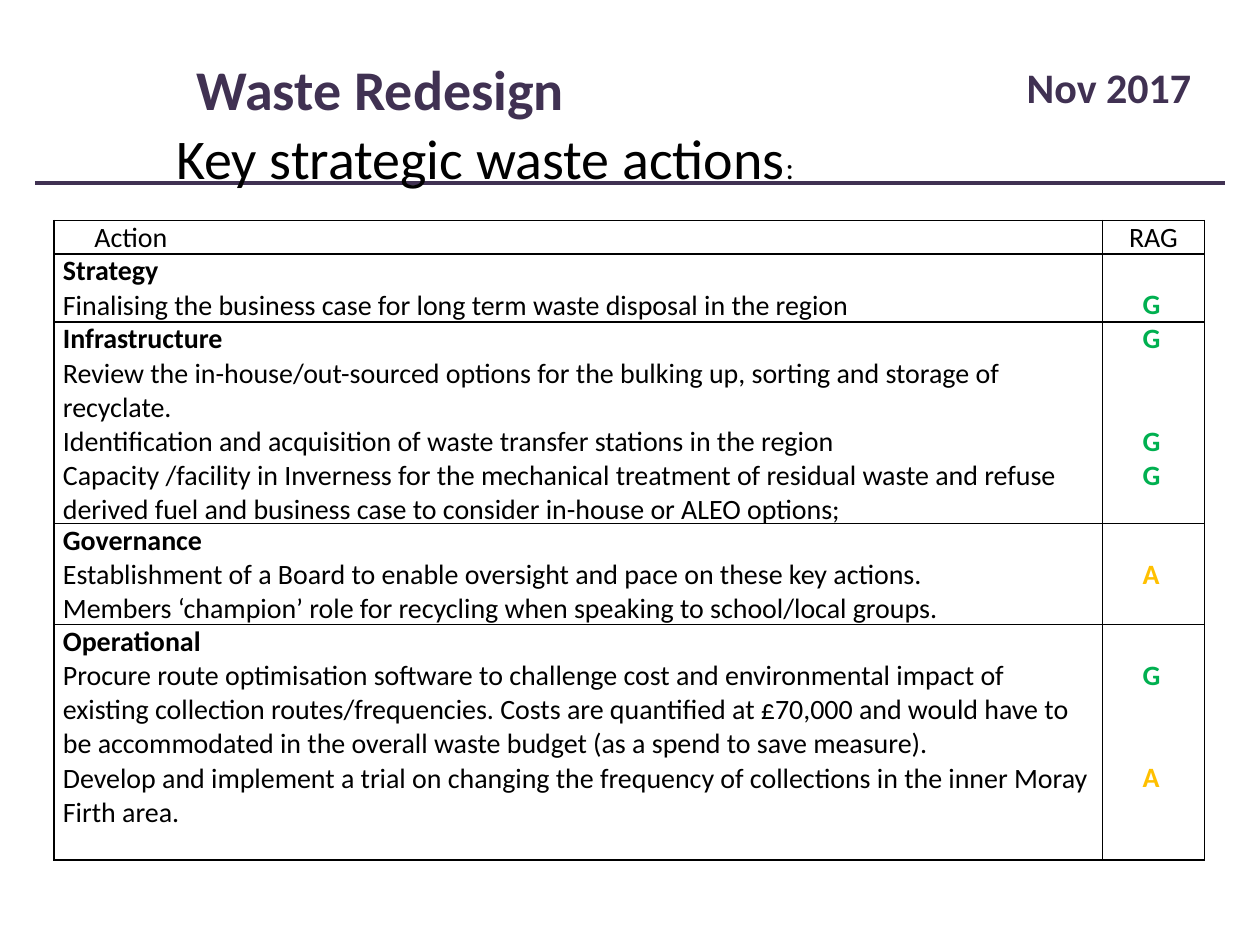
from dataclasses import dataclass

from lxml import etree
from pptx import Presentation
from pptx.dml.color import RGBColor
from pptx.enum.shapes import MSO_CONNECTOR
from pptx.enum.text import MSO_ANCHOR, MSO_AUTO_SIZE, PP_ALIGN
from pptx.oxml.ns import qn
from pptx.util import Inches, Pt

LEFT, CENTER = PP_ALIGN.LEFT, PP_ALIGN.CENTER
PURPLE = RGBColor(0x40, 0x31, 0x52)
BLACK = RGBColor(0x00, 0x00, 0x00)
RAG_COLORS = {"G": RGBColor(0x00, 0xB0, 0x50), "A": RGBColor(0xFF, 0xC0, 0x00)}
FONT = "Calibri"
BODY_SIZE = 16
LINE_HEIGHT = 19.5  # points taken by one line of body text
INDENT = 0.25


@dataclass
class Section:
    heading: str
    actions: list[str]
    ratings: list[tuple[int, str]]  # line number in the cell, rating
    height: float


SECTIONS = [
    Section("Strategy",
            ["Finalising the business case for long term waste disposal in the region"],
            [(1, "G")], 0.54),
    Section("Infrastructure",
            ["Review the in-house/out-sourced options for the bulking up, sorting and "
             "storage of recyclate.",
             "Identification and acquisition of waste transfer stations in the region",
             "Capacity /facility in Inverness for the mechanical treatment of residual "
             "waste and refuse derived fuel and business case to consider in-house or "
             "ALEO options;"],
            [(0, "G"), (3, "G"), (4, "G")], 1.6),
    Section("Governance",
            ["Establishment of a Board to enable oversight and pace on these key actions.",
             "Members ‘champion’ role for recycling when speaking to school/local groups."],
            [(1, "A")], 0.8),
    Section("Operational",
            ["Procure route optimisation software to challenge cost and environmental "
             "impact of existing collection routes/frequencies. Costs are quantified at "
             "£70,000 and would have to be accommodated in the overall waste budget "
             "(as a spend to save measure).",
             "Develop and implement a trial on changing the frequency of collections in "
             "the inner Moray Firth area."],
            [(1, "G"), (4, "A")], 1.87),
]


def add_text(paragraph, text: str, *, size: float = BODY_SIZE, color: RGBColor = BLACK,
             bold: bool = False, align=LEFT, indent: float = 0, before: float = 0) -> None:
    """Add a formatted run to a paragraph."""
    properties = paragraph._p.get_or_add_pPr()
    properties.set("marL", str(Inches(indent)))
    properties.set("indent", "0")
    paragraph.alignment = align
    paragraph.space_before = Pt(before)
    run = paragraph.add_run()
    run.text = text
    run.font.name, run.font.size, run.font.bold = FONT, Pt(size), bold
    run.font.color.rgb = color


def next_paragraph(text_frame, index: int):
    return text_frame.paragraphs[0] if index == 0 else text_frame.add_paragraph()


def place_text_shape(shape, left: float, top: float, width: float, height: float):
    """Position a text shape and return its first paragraph."""
    shape.left, shape.top = Inches(left), Inches(top)
    shape.width, shape.height = Inches(width), Inches(height)
    text_frame = shape.text_frame
    text_frame.word_wrap = False
    text_frame.auto_size = MSO_AUTO_SIZE.SHAPE_TO_FIT_TEXT
    text_frame.vertical_anchor = MSO_ANCHOR.TOP
    return text_frame.paragraphs[0]


def format_cell(cell) -> None:
    """Give a cell thin black borders, no fill and narrow margins."""
    cell.margin_left = cell.margin_right = Inches(0.07)
    cell.margin_top = cell.margin_bottom = 0
    properties = cell._tc.get_or_add_tcPr()
    for side in ("lnL", "lnR", "lnT", "lnB"):
        border = etree.SubElement(properties, qn(f"a:{side}"), w=str(Pt(1)))
        fill = etree.SubElement(border, qn("a:solidFill"))
        etree.SubElement(fill, qn("a:srgbClr"), val=str(BLACK))
    cell.fill.background()


def fill_section(action_cell, rating_cell, section: Section) -> None:
    text_frame = action_cell.text_frame
    for index, text in enumerate([section.heading, *section.actions]):
        add_text(next_paragraph(text_frame, index), text, bold=index == 0)

    # Each rating sits level with the first line of its action
    first_line = section.ratings[0][0]
    rating_cell.margin_top = Pt(first_line * LINE_HEIGHT)
    next_line = first_line
    for index, (line, rating) in enumerate(section.ratings):
        add_text(next_paragraph(rating_cell.text_frame, index), rating, bold=True,
                 color=RAG_COLORS[rating], indent=INDENT,
                 before=(line - next_line) * LINE_HEIGHT)
        next_line = line + 1


def add_action_table(slide) -> None:
    heights = [0.26] + [section.height for section in SECTIONS]
    table = slide.shapes.add_table(len(heights), 2, Inches(0.43), Inches(1.75),
                                   Inches(9.13), Inches(sum(heights))).table
    table.first_row = table.horz_banding = False
    for column, width in zip(table.columns, (8.32, 0.81)):
        column.width = Inches(width)
    for row, height in zip(table.rows, heights):
        row.height = Inches(height)
    for cell in table.iter_cells():
        format_cell(cell)

    add_text(table.cell(0, 0).text_frame.paragraphs[0], "Action", indent=INDENT)
    add_text(table.cell(0, 1).text_frame.paragraphs[0], "RAG", align=CENTER)
    for row_number, section in enumerate(SECTIONS, start=1):
        fill_section(table.cell(row_number, 0), table.cell(row_number, 1), section)


def main() -> None:
    presentation = Presentation()
    presentation.slide_width, presentation.slide_height = Inches(10), Inches(7.5)
    slide = presentation.slides.add_slide(presentation.slide_layouts[5])
    shapes = slide.shapes

    # Title and rule
    title = place_text_shape(shapes.title, 1.46, 0.38, 3.25, 0.64)
    add_text(title, "Waste Redesign", size=32, color=PURPLE, bold=True)
    rule = shapes.add_connector(MSO_CONNECTOR.STRAIGHT, Inches(0.28), Inches(1.45),
                                Inches(9.72), Inches(1.45))
    rule.line.color.rgb, rule.line.width = PURPLE, Pt(2.5)
    etree.SubElement(rule._element.spPr, qn("a:effectLst"))

    # Date and subtitle
    date = place_text_shape(shapes.add_textbox(0, 0, 0, 0), 8.05, 0.44, 1.52, 0.5)
    add_text(date, "Nov 2017", size=24, color=PURPLE, bold=True)
    subtitle = place_text_shape(shapes.add_textbox(0, 0, 0, 0), 1.3, 0.93, 5.21, 0.64)
    add_text(subtitle, "Key strategic waste actions", size=32)
    add_text(subtitle, ":", size=18)

    # Actions with their ratings
    add_action_table(slide)
    presentation.save("out.pptx")


if __name__ == "__main__":
    main()
